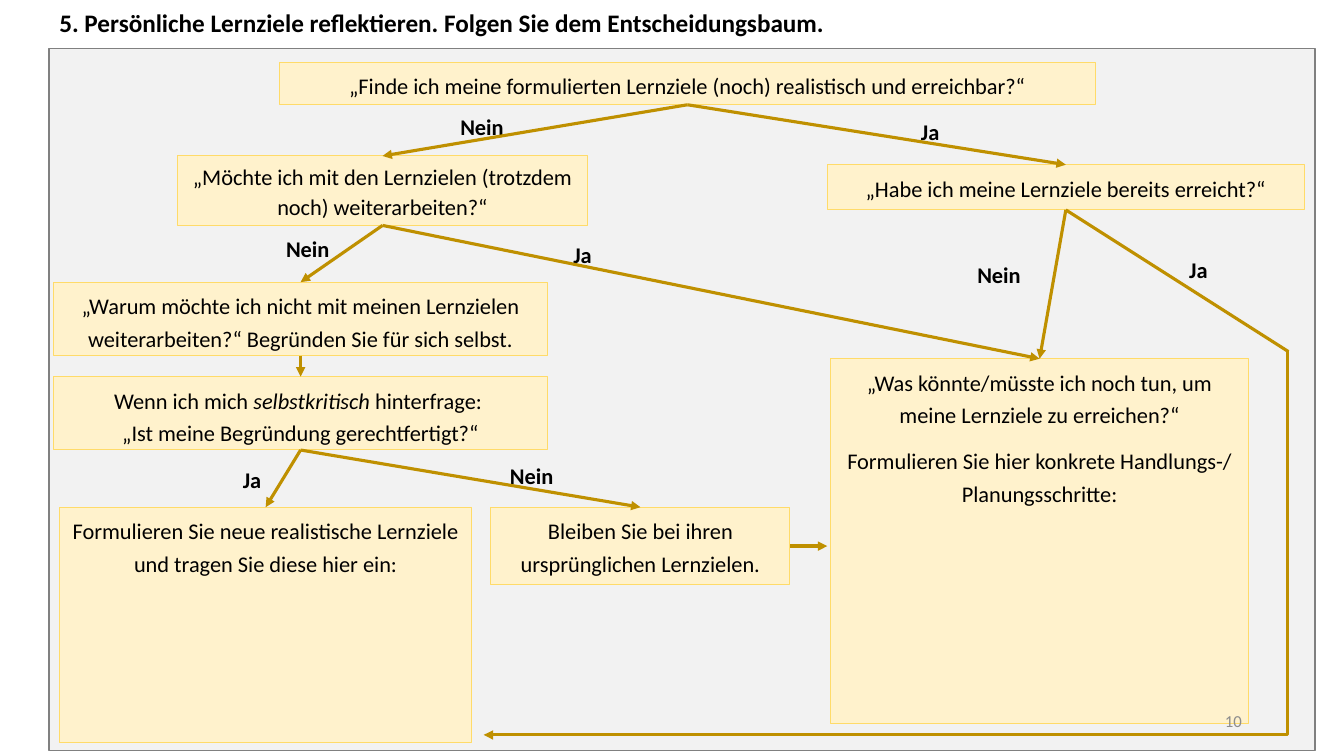
from lxml import etree
from pptx import Presentation
from pptx.dml.color import RGBColor
from pptx.enum import shapes, text
from pptx.oxml.ns import qn
from pptx.util import Cm, Pt

COLORS = {"panel": "F2F2F2", "panel_line": "808080", "box": "FFF2CC", "box_line": "FFDB69",
          "arrow": "BF9000", "text": "000000", "number": "8C8C8C"}
FONT = "Calibri"
TITLE = "5. Persönliche Lernziele reflektieren. Folgen Sie dem Entscheidungsbaum."
PANEL = (1.24, 1.22, 31.9, 17.7)
TITLE_AREA = (1.24, -0.15, 23.37, 1.45)
NUMBER_AREA = (23.93, 17.65, 7.62, 1.02)

BOXES = {
    "realistic": ((7.04, 1.57, 20.57, 1.07), 1.2,
                  ["„Finde ich meine formulierten Lernziele (noch) realistisch und erreichbar?“"]),
    "continue": ((4.47, 3.93, 10.34, 1.75), 1.1,
                 ["„Möchte ich mit den Lernzielen (trotzdem noch) weiterarbeiten?“"]),
    "reached": ((20.85, 4.15, 12.02, 1.14), 1.2,
                ["„Habe ich meine Lernziele bereits erreicht?“"]),
    "why": ((1.35, 7.11, 12.45, 1.85), 1.2,
            ["„Warum möchte ich nicht mit meinen Lernzielen weiterarbeiten?“ "
             "Begründen Sie für sich selbst."]),
    "critical": ((1.35, 9.49, 12.45, 1.85), 1.2,
                 ["Wenn ich mich *selbstkritisch* hinterfrage: \n"
                  "„Ist meine Begründung gerechtfertigt?“"]),
    "new": ((1.5, 12.78, 10.39, 5.92), 1.2,
            ["Formulieren Sie neue realistische Lernziele und tragen Sie diese hier ein:"]),
    "keep": ((12.37, 12.78, 7.54, 1.96), 1.2,
             ["Bleiben Sie bei ihren ursprünglichen Lernzielen."]),
    "steps": ((20.93, 9.04, 10.54, 9.2), 1.2,
              ["„Was könnte/müsste ich noch tun, um meine Lernziele zu erreichen?“",
               "Formulieren Sie hier konkrete Handlungs-/\nPlanungsschritte:"]),
}
LABEL_WIDTHS = {"Nein": 1.78, "Ja": 1.07}
LABEL_HEIGHT = 1.14
LABELS = [("Nein", 11.35, 2.59), ("Ja", 22.96, 2.72), ("Nein", 6.96, 5.66), ("Ja", 14.2, 5.82),
          ("Nein", 24.38, 6.32), ("Ja", 29.72, 6.2), ("Ja", 5.87, 11.48), ("Nein", 12.6, 11.38)]
BRANCHES = [("realistic", "continue"), ("realistic", "reached"), ("continue", "why"),
            ("continue", "steps"), ("reached", "steps"), ("why", "critical"),
            ("critical", "new"), ("critical", "keep")]
CORNER = (32.47, 8.86)
RETURN_END = (12.19, 18.52)
KEEP_END = (20.85, 13.76)
TOP, BOTTOM, RIGHT = 0, 2, 3


def rgb(name):
    return RGBColor.from_string(COLORS[name])


def add_rect(area, fill, line, width):
    sp = s.shapes.add_shape(shapes.MSO_SHAPE.RECTANGLE, *map(Cm, area))
    sp.shadow.inherit = False
    sp.fill.solid()
    sp.fill.fore_color.rgb = rgb(fill)
    sp.line.color.rgb = rgb(line)
    sp.line.width = Pt(width)
    return sp


def style(p, size, color="text", bold=False, align=text.PP_ALIGN.LEFT, spacing=1.0):
    p.alignment = align
    p.line_spacing = spacing
    p.font.name = FONT
    p.font.size = Pt(size)
    p.font.bold = bold
    p.font.color.rgb = rgb(color)


def add_label(area, content, anchor=text.MSO_ANCHOR.TOP, **look):
    tf = s.shapes.add_textbox(*map(Cm, area)).text_frame
    tf.word_wrap = True
    tf.vertical_anchor = anchor
    tf.text = content
    style(tf.paragraphs[0], **look)


def fill_box(tf, paragraphs, spacing):
    tf.word_wrap = True
    tf.vertical_anchor = text.MSO_ANCHOR.TOP
    for i, content in enumerate(paragraphs):
        p = tf.add_paragraph() if i else tf.paragraphs[0]
        style(p, 16, align=text.PP_ALIGN.CENTER, spacing=spacing)
        if i:
            p.space_before = Pt(10)
        for j, line in enumerate(content.split("\n")):
            if j:
                p.add_line_break()
            for k, piece in enumerate(line.split("*")):
                r = p.add_run()
                r.text = piece
                if k % 2:
                    r.font.italic = True


def add_line(start=(0, 0), end=(0, 0), kind=shapes.MSO_CONNECTOR.STRAIGHT, arrow=True):
    cx = s.shapes.add_connector(kind, *map(Cm, start + end))
    cx.line.color.rgb = rgb("arrow")
    cx.line.width = Pt(2.25)
    if arrow:
        etree.SubElement(cx.line._get_or_add_ln(), qn("a:tailEnd"), type="triangle")
    etree.SubElement(cx._element.spPr, qn("a:effectLst"))
    return cx


prs = Presentation()
prs.slide_width, prs.slide_height = Cm(33.87), Cm(19.05)
s = prs.slides.add_slide(prs.slide_layouts[5])

title = s.shapes.title
title.left, title.top, title.width, title.height = map(Cm, TITLE_AREA)
title.text_frame.text = TITLE
title.text_frame.vertical_anchor = text.MSO_ANCHOR.MIDDLE
style(title.text_frame.paragraphs[0], 18, bold=True)

add_rect(PANEL, "panel", "panel_line", 1)

boxes = {}
for name, (area, spacing, paragraphs) in BOXES.items():
    boxes[name] = add_rect(area, "box", "box_line", 0.75)
    fill_box(boxes[name].text_frame, paragraphs, spacing)

for answer, left, top in LABELS:
    add_label((left, top, LABEL_WIDTHS[answer], LABEL_HEIGHT), answer,
              size=16, bold=True, spacing=1.2)

for source, target in BRANCHES:
    cx = add_line()
    cx.begin_connect(boxes[source], BOTTOM)
    cx.end_connect(boxes[target], TOP)

add_line(end=CORNER, arrow=False).begin_connect(boxes["reached"], BOTTOM)
add_line(end=KEEP_END).begin_connect(boxes["keep"], RIGHT)

elbow = add_line(CORNER, RETURN_END, shapes.MSO_CONNECTOR.ELBOW)
geometry = elbow._element.spPr.find(qn("a:prstGeom"))
adjustments = geometry.find(qn("a:avLst"))
if adjustments is None:
    adjustments = etree.SubElement(geometry, qn("a:avLst"))
etree.SubElement(adjustments, qn("a:gd"), name="adj1", fmla="val 100")

add_label(NUMBER_AREA, "10", text.MSO_ANCHOR.MIDDLE, size=12, color="number",
          align=text.PP_ALIGN.RIGHT)

prs.save("out.pptx")
